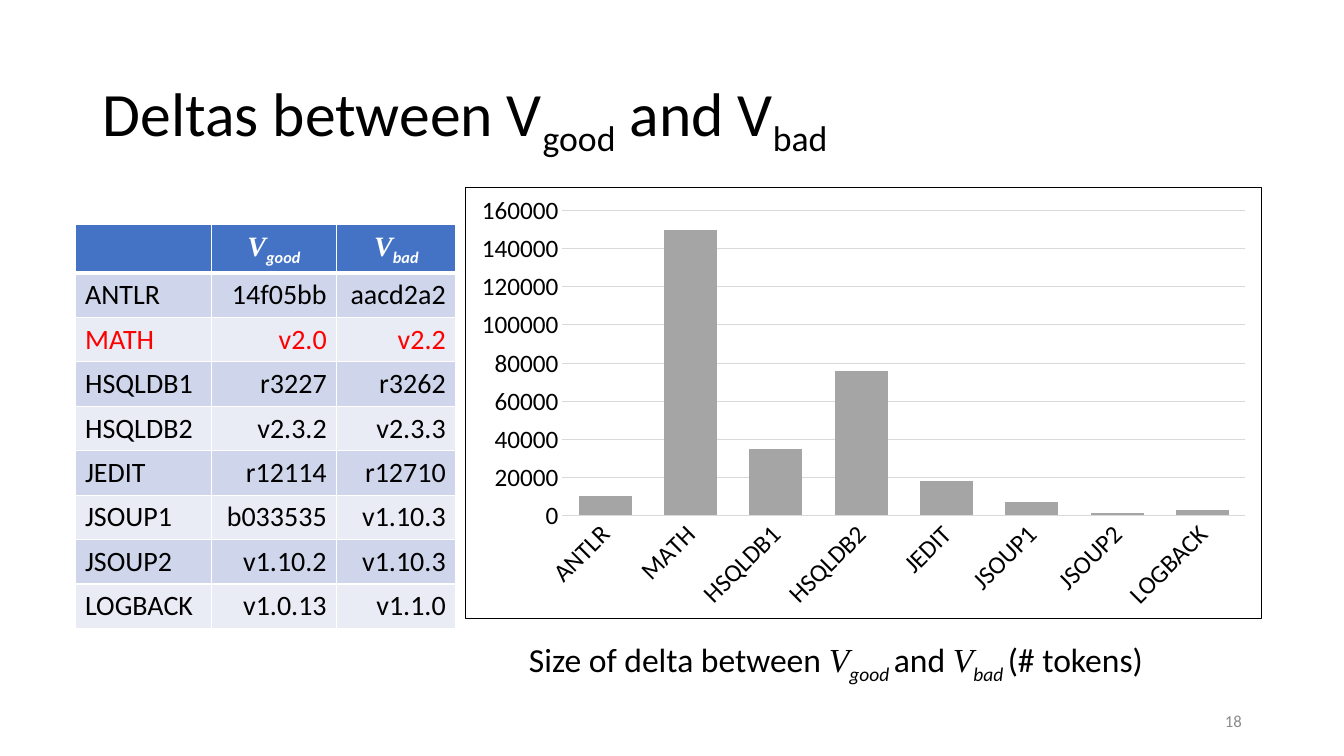
from lxml.etree import SubElement
from pptx import Presentation
from pptx.chart.data import CategoryChartData
from pptx.dml.color import RGBColor
from pptx.enum.chart import XL_CHART_TYPE, XL_TICK_MARK
from pptx.enum.text import MSO_ANCHOR, PP_ALIGN
from pptx.oxml import parse_xml
from pptx.oxml.ns import nsdecls, qn
from pptx.util import Cm, Pt

COLORS = {
    "black": "000000", "white": "FFFFFF", "red": "FF0000", "header": "4472C4",
    "odd": "CFD5EA", "even": "E9EBF5", "bar": "A5A5A5", "grid": "D9D9D9", "number": "8C8C8C",
}
STYLES = {
    "plain": {"name": "Calibri"},
    "sub": {"name": "Calibri"},
    "variable": {"name": "Times New Roman", "italic": True},
    "variable sub": {"name": "Calibri", "italic": True},
}

TITLE = [("Deltas between V", "plain"), ("good", "sub"), (" and V", "plain"), ("bad", "sub")]
CAPTION = [
    ("Size of delta between ", "plain"), ("V", "variable"), ("good ", "variable sub"),
    ("and ", "plain"), ("V", "variable"), ("bad ", "variable sub"), ("(# tokens)", "plain"),
]
TEXT_BOXES = [
    {"runs": TITLE, "box": (2.34, 1.02, 29.21, 3.68), "size": 44, "color": "black",
     "paragraph": {"line_spacing": 0.9}, "anchor": MSO_ANCHOR.MIDDLE},
    {"runs": CAPTION, "box": (13.08, 15.98, 17.35, 1.27), "size": 24, "color": "black",
     "paragraph": {}, "anchor": MSO_ANCHOR.TOP},
    {"runs": [("18", "plain")], "box": (23.93, 17.65, 7.62, 1.02), "size": 12, "color": "number",
     "paragraph": {"alignment": PP_ALIGN.RIGHT}, "anchor": MSO_ANCHOR.MIDDLE},
]

HEADER = ["", "good", "bad"]
VERSIONS = [
    ("ANTLR", "14f05bb", "aacd2a2"),
    ("MATH", "v2.0", "v2.2"),
    ("HSQLDB1", "r3227", "r3262"),
    ("HSQLDB2", "v2.3.2", "v2.3.3"),
    ("JEDIT", "r12114", "r12710"),
    ("JSOUP1", "b033535", "v1.10.3"),
    ("JSOUP2", "v1.10.2", "v1.10.3"),
    ("LOGBACK", "v1.0.13", "v1.1.0"),
]
HIGHLIGHTED = "MATH"
TOKENS = [10000, 150000, 35000, 76000, 18000, 7000, 1000, 3000]
TABLE_LEFT, TABLE_TOP, ROW_HEIGHT = 1.89, 5.66, 1.12
COLUMN_WIDTHS = [3.43, 3.17, 3.0]
CHART_BOX = (11.73, 4.7, 20.07, 10.9)


def rgb(color):
    return RGBColor.from_string(COLORS[color])


def apply(target, values):
    for name, value in values.items():
        setattr(target, name, value)


def add_runs(paragraph, runs, size, color, bold=False):
    for text, style in runs:
        run = paragraph.add_run()
        run.text = text
        apply(run.font, {"size": Pt(size), "bold": bold, **STYLES[style]})
        run.font.color.rgb = rgb(color)
        if style.endswith("sub"):
            run.font._element.set("baseline", "-25000")


def add_text(slide, item):
    frame = slide.shapes.add_textbox(*map(Cm, item["box"])).text_frame
    apply(frame, {"word_wrap": True, "vertical_anchor": item["anchor"]})
    paragraph = frame.paragraphs[0]
    apply(paragraph, item["paragraph"])
    add_runs(paragraph, item["runs"], item["size"], item["color"])


def add_borders(cell, row):
    properties = cell._tc.get_or_add_tcPr()
    widths = {"L": 1, "R": 1, "T": 3 if row == 1 else 1, "B": 3 if row == 0 else 1}
    for side, width in widths.items():
        line = SubElement(properties, qn(f"a:ln{side}"), w=str(Pt(width)))
        fill = SubElement(line, qn("a:solidFill"))
        SubElement(fill, qn("a:srgbClr"), val=COLORS["white"])


def add_versions(slide):
    rows = [HEADER, *VERSIONS]
    table = slide.shapes.add_table(
        len(rows), len(HEADER), Cm(TABLE_LEFT), Cm(TABLE_TOP),
        Cm(sum(COLUMN_WIDTHS)), Cm(ROW_HEIGHT * len(rows))).table
    for column, width in zip(table.columns, COLUMN_WIDTHS):
        column.width = Cm(width)
    for row, values in enumerate(rows):
        table.rows[row].height = Cm(ROW_HEIGHT)
        for column, text in enumerate(values):
            cell = table.cell(row, column)
            add_borders(cell, row)
            cell.fill.solid()
            cell.fill.fore_color.rgb = rgb("header" if row == 0 else "odd" if row % 2 else "even")
            paragraph = cell.text_frame.paragraphs[0]
            if row == 0:
                paragraph.alignment = PP_ALIGN.CENTER
                runs = [("V", "variable"), (text, "variable sub")] if text else []
                add_runs(paragraph, runs, 20, "white", True)
            else:
                paragraph.alignment = PP_ALIGN.RIGHT if column else PP_ALIGN.LEFT
                color = "red" if values[0] == HIGHLIGHTED else "black"
                add_runs(paragraph, [(text, "plain")], 20, color)


def add_delta_chart(slide):
    data = CategoryChartData()
    data.categories = [version[0] for version in VERSIONS]
    data.add_series("Series 1", TOKENS)
    chart = slide.shapes.add_chart(XL_CHART_TYPE.COLUMN_CLUSTERED, *map(Cm, CHART_BOX), data).chart
    apply(chart, {"has_legend": False, "has_title": False})
    apply(chart.font, {"name": "Calibri", "size": Pt(10)})
    chart.font.color.rgb = rgb("black")
    plot = chart.plots[0]
    apply(plot, {"gap_width": 61, "overlap": -27, "vary_by_categories": False})
    bars = plot.series[0].format.fill
    bars.solid()
    bars.fore_color.rgb = rgb("bar")

    categories, values = chart.category_axis, chart.value_axis
    for axis in (categories, values):
        apply(axis, {"major_tick_mark": XL_TICK_MARK.NONE, "minor_tick_mark": XL_TICK_MARK.NONE})
        font = axis.tick_labels.font
        apply(font, {"name": "Calibri", "size": Pt(18)})
        font.color.rgb = rgb("black")
    apply(values, {"minimum_scale": 0, "maximum_scale": 160000, "major_unit": 20000})
    values.format.line.fill.background()
    for line in (categories.format.line, values.major_gridlines.format.line):
        line.width = Pt(0.75)
        line.color.rgb = rgb("grid")
    categories._element.find(qn("c:txPr")).find(qn("a:bodyPr")).set("rot", "-2700000")

    border = parse_xml(
        f'<c:spPr {nsdecls("c", "a")}><a:noFill/><a:ln w="{Pt(0.75)}"><a:solidFill>'
        f'<a:srgbClr val="{COLORS["black"]}"/></a:solidFill></a:ln></c:spPr>')
    chart._chartSpace.find(qn("c:txPr")).addprevious(border)


def main():
    """Build the slide comparing the good and bad versions of each project."""
    presentation = Presentation()
    apply(presentation, {"slide_width": Cm(33.87), "slide_height": Cm(19.05)})
    slide = presentation.slides.add_slide(presentation.slide_layouts[6])
    for item in TEXT_BOXES:
        add_text(slide, item)
    add_versions(slide)
    add_delta_chart(slide)
    presentation.save("out.pptx")


if __name__ == "__main__":
    main()
